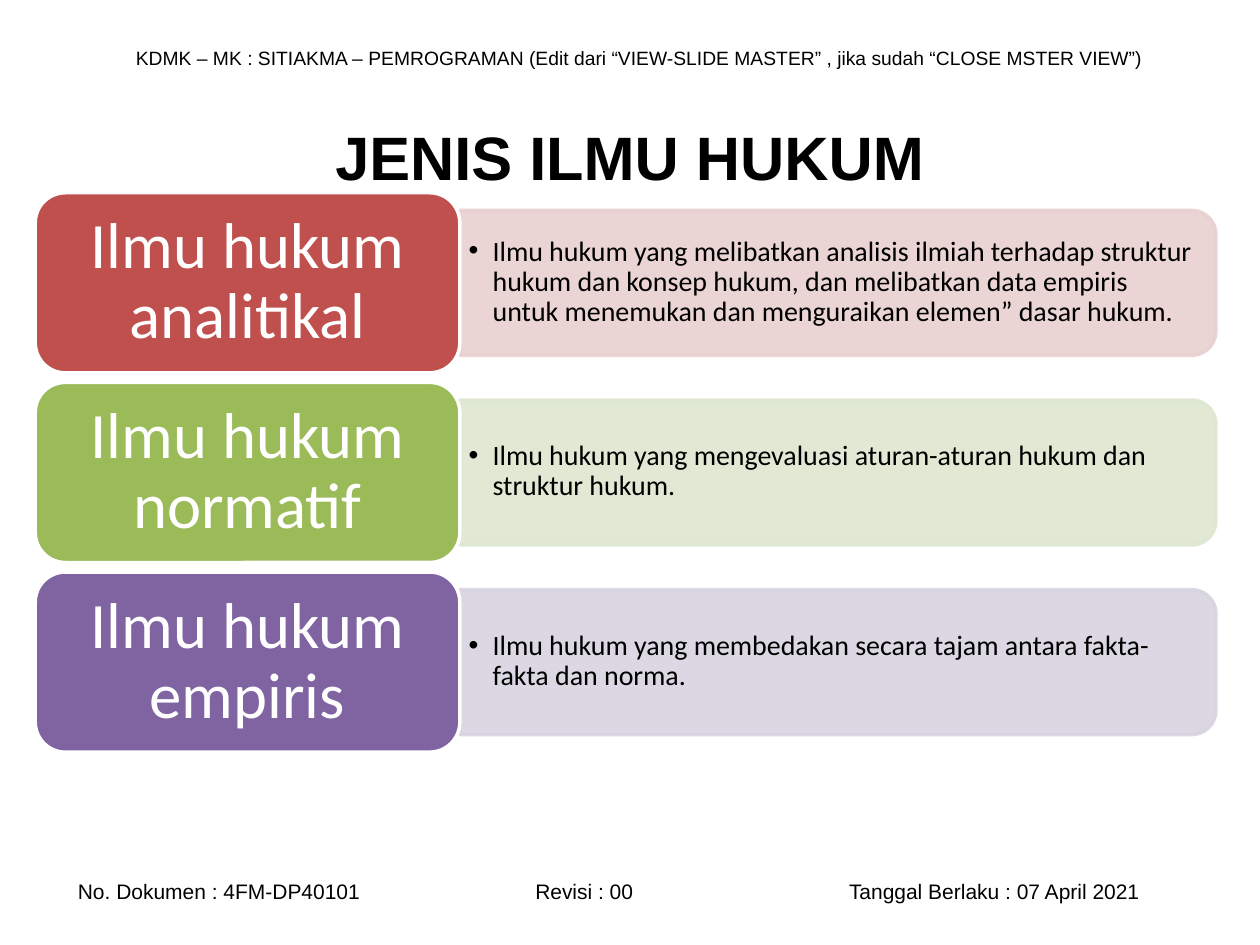
from lxml import etree
from pptx import Presentation, util as u
from pptx.dml.color import RGBColor
from pptx.enum import shapes, text
from pptx.oxml.ns import qn

WIDTH, HEIGHT = 10, 7.5
BLACK = RGBColor(0x00, 0x00, 0x00)
WHITE = RGBColor(0xFF, 0xFF, 0xFF)
RED, PALE_RED = RGBColor(0xC0, 0x50, 0x4D), RGBColor(0xE8, 0xD0, 0xD0)
GREEN, PALE_GREEN = RGBColor(0x9B, 0xBB, 0x59), RGBColor(0xDE, 0xE7, 0xD1)
PURPLE, PALE_PURPLE = RGBColor(0x80, 0x64, 0xA2), RGBColor(0xD8, 0xD3, 0xE0)

# Grid of the list: one label column, one panel column, equal rows
LABEL_LEFT, LABEL_WIDTH, LABEL_HEIGHT = 0.28, 3.37, 1.43
PANEL_LEFT, PANEL_WIDTH, PANEL_HEIGHT = 3.65, 6, 1.15
FIRST_ROW, ROW_STEP = 1.53, 1.505

ROWS = [
    ("Ilmu hukum analitikal", RED, PALE_RED,
     "Ilmu hukum yang melibatkan analisis ilmiah terhadap struktur hukum dan "
     "konsep hukum, dan melibatkan data empiris untuk menemukan dan "
     "menguraikan elemen” dasar hukum."),
    ("Ilmu hukum normatif", GREEN, PALE_GREEN,
     "Ilmu hukum yang mengevaluasi aturan-aturan hukum dan struktur hukum."),
    ("Ilmu hukum empiris", PURPLE, PALE_PURPLE,
     "Ilmu hukum yang membedakan secara tajam antara fakta-fakta dan norma."),
]


def set_all(target, values):
    for name, value in values.items():
        setattr(target, name, value)


def write(shape, words, font, size, color=BLACK, bold=False, inset=(0.1, 0.05),
          align=text.PP_ALIGN.LEFT, spacing=1.0):
    """Fill a shape with one paragraph, centred vertically."""
    frame = shape.text_frame
    across, down = (u.Inches(value) for value in inset)
    set_all(frame, {
        "word_wrap": True, "vertical_anchor": text.MSO_ANCHOR.MIDDLE,
        "margin_left": across, "margin_right": across,
        "margin_top": down, "margin_bottom": down})
    para = frame.paragraphs[0]
    set_all(para, {"alignment": align, "line_spacing": spacing})
    span = para.add_run()
    span.text = words
    set_all(span.font, {"name": font, "size": u.Pt(size), "bold": bold})
    span.font.color.rgb = color
    return para


def add_text(page, place, words, font, size, **style):
    box = page.shapes.add_textbox(*map(u.Inches, place))
    return box, write(box, words, font, size, **style)


def add_block(page, kind, place, fill, line, opacity=100):
    block = page.shapes.add_shape(kind, *map(u.Inches, place))
    block.shadow.inherit = False
    block.fill.solid()
    block.fill.fore_color.rgb = fill
    block.line.color.rgb = line
    block.line.width = u.Pt(2)
    if opacity < 100:
        for color in block._element.spPr.iter(qn("a:srgbClr")):
            etree.SubElement(color, qn("a:alpha"), val=str(opacity * 1000))
    return block


def add_bullet(para, indent):
    props = para._p.get_or_add_pPr()
    props.set("marL", str(u.Inches(indent)))
    props.set("indent", str(-u.Inches(indent)))
    etree.SubElement(props, qn("a:buFont"), typeface="Arial")
    etree.SubElement(props, qn("a:buChar"), char="•")


def add_tabs(para, stops):
    tabs = etree.SubElement(para._p.get_or_add_pPr(), qn("a:tabLst"))
    for stop in stops:
        etree.SubElement(tabs, qn("a:tab"), pos=str(u.Inches(stop)), algn="l")


def add_row(page, index, label, strong, pale, detail):
    top = FIRST_ROW + index * ROW_STEP
    middle = top + LABEL_HEIGHT / 2

    # Pale panel, turned so that its rounded end faces right
    center = PANEL_LEFT + PANEL_WIDTH / 2
    panel = add_block(
        page, shapes.MSO_SHAPE.ROUND_2_SAME_RECTANGLE,
        (center - PANEL_HEIGHT / 2, middle - PANEL_WIDTH / 2,
         PANEL_HEIGHT, PANEL_WIDTH), pale, pale, opacity=90)
    panel.rotation = 90
    _, para = add_text(
        page, (PANEL_LEFT, middle - 0.52, PANEL_WIDTH - 0.06, 1.03),
        detail, "Calibri", 16, inset=(0.07, 0.03), spacing=0.9)
    add_bullet(para, 0.19)

    # Strong label
    block = add_block(page, shapes.MSO_SHAPE.ROUNDED_RECTANGLE,
                      (LABEL_LEFT, top, LABEL_WIDTH, LABEL_HEIGHT),
                      strong, WHITE)
    write(block, label, "Calibri", 37, color=WHITE, inset=(0.15, 0.08),
          align=text.PP_ALIGN.CENTER, spacing=0.9)


def main():
    deck = Presentation()
    set_all(deck, {"slide_width": u.Inches(WIDTH),
                   "slide_height": u.Inches(HEIGHT)})
    page = deck.slides.add_slide(deck.slide_layouts[6])

    # Header and footer
    add_text(page, (0.98, 0.31, 8.35, 0.29),
             "KDMK – MK : SITIAKMA – PEMROGRAMAN (Edit dari “VIEW-SLIDE "
             "MASTER” , jika sudah “CLOSE MSTER VIEW”)", "Arial", 11)
    _, footer = add_text(
        page, (0.52, 6.92, 9.13, 0.3),
        "No. Dokumen : 4FM-DP40101\tRevisi : 00\t"
        "Tanggal Berlaku : 07 April 2021", "Arial", 12)
    add_tabs(footer, (3.63, 6.12))

    # Title
    add_text(page, (0.5, 0.61, WIDTH - 1, 1.25), "JENIS ILMU HUKUM",
             "Arial", 35, bold=True, align=text.PP_ALIGN.CENTER)

    # List of the three kinds
    for index, row in enumerate(ROWS):
        add_row(page, index, *row)

    deck.save("out.pptx")


if __name__ == "__main__":
    main()
